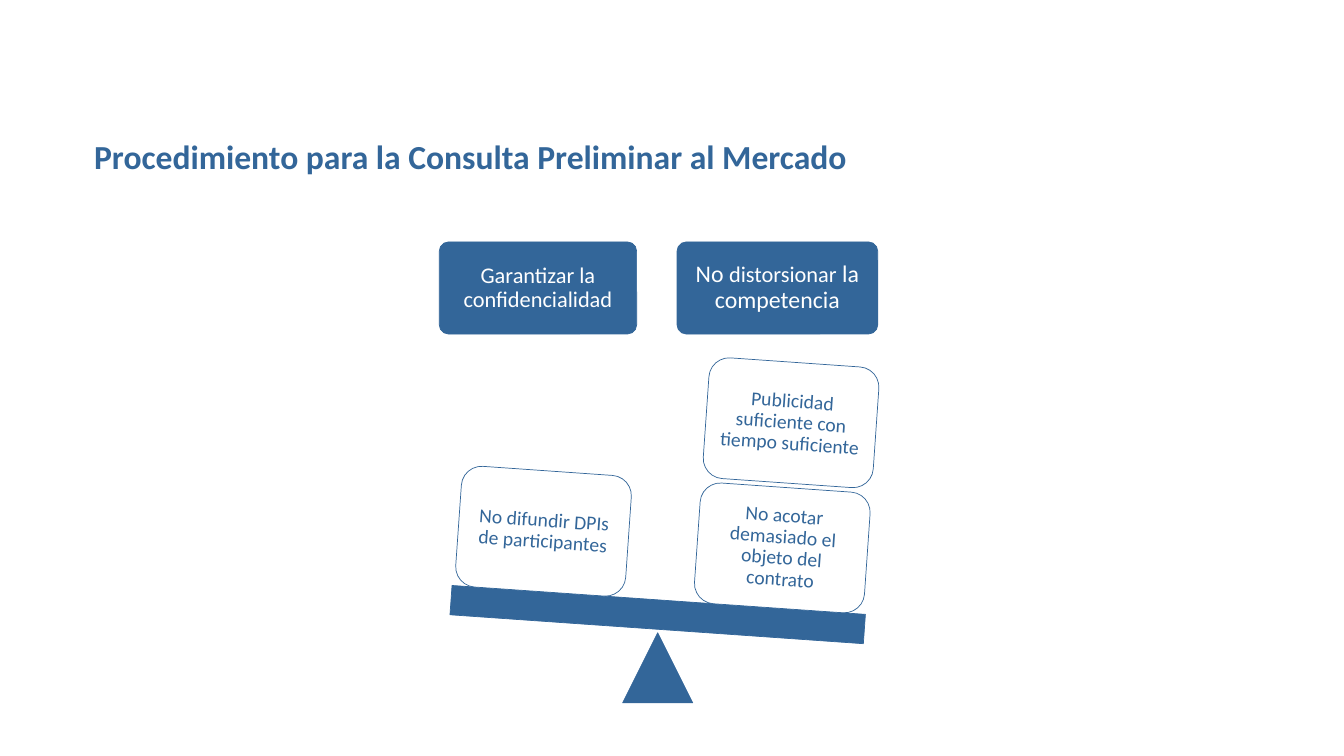
from math import cos, radians, sin

from pptx import Presentation
from pptx.dml.color import RGBColor
from pptx.enum.shapes import MSO_SHAPE
from pptx.enum.text import MSO_ANCHOR, PP_ALIGN
from pptx.util import Pt

BLUE = "336699"
WHITE = "FFFFFF"
TILT = 4
ARM = 85.5

HEADINGS = [
    (-1, 141, [("Garantizar la confidencialidad", 16)]),
    (1, 143.4, [("No ", 17), ("distorsionar", 16), (" la competencia", 17)]),
]
WEIGHTS = [
    (1, 0, "No acotar demasiado el objeto del contrato"),
    (1, 1, "Publicidad suficiente con tiempo suficiente"),
    (-1, 0, "No difundir DPIs de participantes"),
]


def color(value):
    return RGBColor.from_string(value)


def add_figure(page, kind, center_x, center_y, width, height, fill=BLUE, tilt=0):
    shape = page.shapes.add_shape(
        kind, Pt(center_x - width / 2), Pt(center_y - height / 2), Pt(width), Pt(height)
    )
    shape.shadow.inherit = False
    shape.fill.solid()
    shape.fill.fore_color.rgb = color(fill)
    shape.line.color.rgb = color(BLUE)
    shape.line.width = Pt(0.5)
    shape.rotation = tilt
    return shape


def write_label(shape, parts, text_color, inset):
    frame = shape.text_frame
    frame.word_wrap = True
    frame.vertical_anchor = MSO_ANCHOR.MIDDLE
    frame.margin_left = frame.margin_right = Pt(inset)
    frame.margin_top = frame.margin_bottom = Pt(inset)
    para = frame.paragraphs[0]
    para.alignment = PP_ALIGN.CENTER
    para.line_spacing = 0.9
    para.font.name = "Calibri"
    para.font.color.rgb = color(text_color)
    for text, size in parts:
        span = para.add_run()
        span.text = text
        span.font.size = Pt(size)


def add_title(page, left, top, width, height):
    title = page.shapes.title
    title.left, title.top = Pt(left), Pt(top)
    title.width, title.height = Pt(width), Pt(height)
    frame = title.text_frame
    frame.text = "Procedimiento para la Consulta Preliminar al Mercado"
    frame.vertical_anchor = MSO_ANCHOR.TOP
    para = frame.paragraphs[0]
    para.alignment = PP_ALIGN.LEFT
    para.line_spacing = 0.9
    para.font.name = "Calibri"
    para.font.size = Pt(24)
    para.font.bold = True
    para.font.color.rgb = color(BLUE)


def add_headings(page, left, top, width, height):
    middle = left + width / 2
    for side, heading_width, parts in HEADINGS:
        heading = add_figure(
            page, MSO_SHAPE.ROUNDED_RECTANGLE,
            middle + side * ARM, top + height / 2, heading_width, height,
        )
        heading.adjustments[0] = 0.1
        write_label(heading, parts, WHITE, 5)


def add_balance(page, left, top, width, height):
    fulcrum, beam_width, beam_height = 50, 296, 21
    weight_width, weight_height, gap = 121.7, 86.4, 3.2
    middle = left + width / 2
    bottom = top + height
    beam_y = bottom - 63
    angle = radians(TILT)

    add_figure(page, MSO_SHAPE.ISOSCELES_TRIANGLE,
               middle, bottom - fulcrum / 2, fulcrum, fulcrum)
    add_figure(page, MSO_SHAPE.RECTANGLE,
               middle, beam_y, beam_width, beam_height, tilt=TILT)
    for side, level, text in WEIGHTS:
        along = side * ARM
        up = (beam_height + weight_height) / 2 + level * (weight_height + gap)
        weight = add_figure(
            page, MSO_SHAPE.ROUNDED_RECTANGLE,
            middle + along * cos(angle) + up * sin(angle),
            beam_y + along * sin(angle) - up * cos(angle),
            weight_width, weight_height, WHITE, TILT,
        )
        write_label(weight, [(text, 14)], BLUE, 4.2)


def main():
    deck = Presentation()
    deck.slide_width, deck.slide_height = Pt(960), Pt(540)
    page = deck.slides.add_slide(deck.slide_layouts[5])
    add_title(page, 60, 96.5, 840, 42)
    add_headings(page, 313.2, 172.8, 313.2, 65.8)
    add_balance(page, 313.2, 254, 313.2, 248)
    deck.save("out.pptx")


if __name__ == "__main__":
    main()
